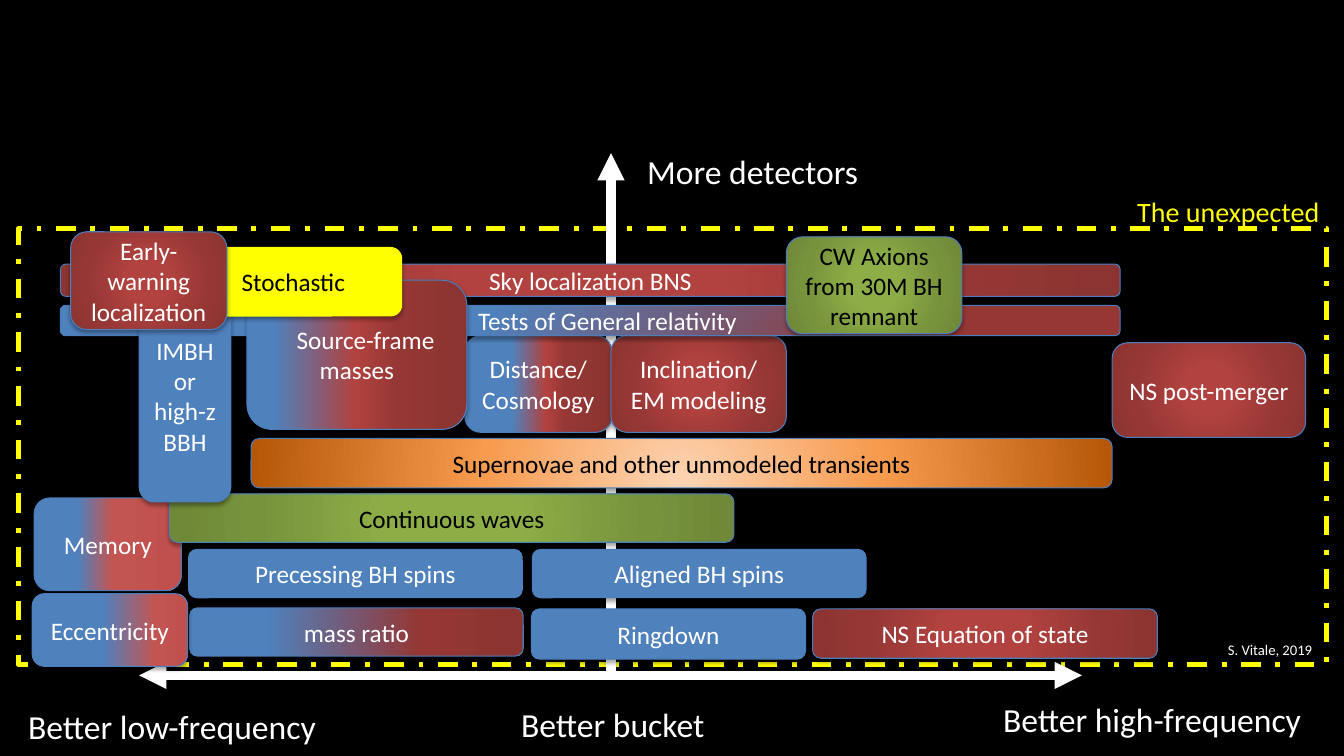
from pptx import Presentation
from pptx.dml.color import RGBColor
from pptx.enum.dml import MSO_LINE
from pptx.enum.shapes import MSO_CONNECTOR, MSO_SHAPE
from pptx.enum.text import MSO_ANCHOR, PP_ALIGN
from pptx.oxml import parse_xml
from pptx.oxml.ns import nsdecls
from pptx.util import Inches, Pt

RECT, ROUNDED = MSO_SHAPE.RECTANGLE, MSO_SHAPE.ROUNDED_RECTANGLE
STRAIGHT, DASH_DOT = MSO_CONNECTOR.STRAIGHT, MSO_LINE.DASH_DOT
CENTER, MIDDLE = PP_ALIGN.CENTER, MSO_ANCHOR.MIDDLE

BLACK = RGBColor(0x00, 0x00, 0x00)
WHITE = RGBColor(0xFF, 0xFF, 0xFF)
YELLOW = RGBColor(0xFF, 0xFF, 0x00)
BLUE = RGBColor(0x4F, 0x81, 0xBD)
EDGE = RGBColor(0x4B, 0x7E, 0xBC)
RED = RGBColor(0xB1, 0x42, 0x3F)
DARK_RED = RGBColor(0x95, 0x37, 0x35)
DEEP_RED = RGBColor(0x8B, 0x34, 0x31)
LIGHT_RED = RGBColor(0xC2, 0x55, 0x52)
SOFT_RED = RGBColor(0xC0, 0x50, 0x4D)
GREEN = RGBColor(0x8D, 0xAE, 0x47)
DARK_GREEN = RGBColor(0x77, 0x93, 0x3C)
DEEP_GREEN = RGBColor(0x6F, 0x89, 0x38)
PEACH = RGBColor(0xFC, 0xD5, 0xB5)
ORANGE = RGBColor(0xF7, 0x9B, 0x4F)
BROWN = RGBColor(0xB6, 0x57, 0x08)

FONT = "Calibri"
CENTRE = (50, 50, 50, 50)
REDS = [(69, DARK_RED), (97, DEEP_RED)]

# Gradient: (stops, focus as left, top, right, bottom; None runs left to right)
RED_GLOW = ([(0, RED), (23, RED)] + REDS, CENTRE)
GREEN_GLOW = ([(0, GREEN), (23, GREEN), (69, DARK_GREEN), (97, DEEP_GREEN)], CENTRE)
ORANGE_GLOW = ([(0, PEACH), (46, ORANGE), (100, BROWN)], (50, 130, 50, -30))
CORNER_GLOW = ([(0, BLUE), (37, BLUE), (40, BLUE), (79, DARK_RED)], (0, 0, 100, 100))
MEMORY_FADE = ([(29, BLUE), (53, LIGHT_RED), (100, SOFT_RED)], None)
ECCENTRIC_FADE = ([(45, BLUE), (79, LIGHT_RED), (100, SOFT_RED)], None)
RATIO_FADE = ([(0, BLUE), (23, BLUE)] + REDS, None)
DISTANCE_FADE = ([(32, BLUE), (55, RED)] + REDS, None)
MASSES_FADE = ([(12, BLUE), (49, RED)] + REDS, None)

FRAME = (0.18, 2.27, 12.98, 4.32)
# from x, from y, to x, to y, arrowhead at both ends
AXES = [(6.06, 6.7, 6.06, 1.52, False), (1.38, 6.7, 10.73, 6.7, True)]

# text, left, top, width, height, fill, text colour, first-line indent
TOPICS = [
    ("Sky localization BNS", 0.6, 2.62, 10.51, 0.32, RED_GLOW, WHITE, 0),
    ("Memory", 0.34, 4.94, 1.46, 0.92, MEMORY_FADE, WHITE, 0),
    ("Ringdown", 5.27, 6.04, 2.72, 0.5, BLUE, WHITE, 0),
    ("NS Equation of state", 8.06, 6.04, 3.42, 0.49, RED_GLOW, WHITE, 0),
    ("Precessing BH spins", 1.87, 5.45, 3.31, 0.48, BLUE, WHITE, 0),
    ("mass ratio", 1.88, 6.03, 3.31, 0.48, RATIO_FADE, WHITE, 0),
    ("Distance/\nCosmology", 4.61, 3.33, 1.46, 0.96, DISTANCE_FADE, WHITE, 0),
    ("Aligned BH spins", 5.28, 5.45, 3.31, 0.48, BLUE, WHITE, 0),
    ("Supernovae and other unmodeled transients",
     2.49, 4.35, 8.54, 0.49, ORANGE_GLOW, BLACK, 0),
    ("Continuous waves", 1.68, 4.9, 5.6, 0.48, GREEN_GLOW, BLACK, 0),
    ("Inclination/\nEM modeling", 6.06, 3.33, 1.74, 0.96, RED_GLOW, WHITE, 0),
    ("Tests of General relativity", 0.6, 3.03, 10.51, 0.3, CORNER_GLOW, WHITE, 0.34),
    ("Source-frame masses", 2.45, 2.78, 2.18, 1.48, MASSES_FADE, WHITE, 0.17),
    ("NS post-merger", 11.03, 3.4, 1.92, 0.94, RED_GLOW, WHITE, 0),
    ("IMBH\nor high-z\nBBH", 1.38, 2.87, 0.91, 2.11, BLUE, WHITE, 0),
    ("Stochastic", 1.83, 2.45, 2.16, 0.69, YELLOW, BLACK, 0),
    ("CW Axions from 30M BH remnant", 7.8, 2.35, 1.74, 0.96, GREEN_GLOW, BLACK, 0),
    ("Early-warning localization", 0.7, 2.3, 1.55, 0.97, RED_GLOW, WHITE, 0),
    ("Eccentricity", 0.32, 5.89, 1.54, 0.72, ECCENTRIC_FADE, WHITE, 0),
]

# text, left, top, width, height, size, colour
LABELS = [
    ("More detectors", 6.32, 1.45, 3.29, 0.5, 24, WHITE),
    ("Better low-frequency", 0.18, 6.95, 3.13, 0.5, 24, WHITE),
    ("Better bucket", 5.07, 6.93, 2.71, 0.5, 24, WHITE),
    ("Better high-frequency", 9.85, 6.88, 3.37, 0.5, 24, WHITE),
    ("The unexpected", 11.18, 1.88, 2.15, 0.44, 20, YELLOW),
    ("S. Vitale, 2019", 12.08, 6.31, 1.25, 0.29, 10.5, WHITE),
]


def add_shadow(sp, distance, opacity):
    sp._element.spPr.append(parse_xml(
        f'<a:effectLst {nsdecls("a")}><a:outerShdw blurRad="{Pt(3.1)}" dist="{Pt(distance)}" '
        f'dir="5400000" rotWithShape="0"><a:srgbClr val="{BLACK}">'
        f'<a:alpha val="{opacity * 1000}"/></a:srgbClr></a:outerShdw></a:effectLst>'))


def fill_gradient(sp, stops, focus):
    marks = "".join(f'<a:gs pos="{pos * 1000}"><a:srgbClr val="{color}"/></a:gs>'
                    for pos, color in stops)
    if focus:
        edges = " ".join(f'{side}="{pct * 1000}"' for side, pct in zip("ltrb", focus))
        shade = f'<a:path path="circle"><a:fillToRect {edges}/></a:path>'
    else:
        shade = '<a:lin ang="0" scaled="0"/>'
    sp.fill.background()
    spPr = sp._element.spPr
    spPr.replace(spPr.find("{*}noFill"), parse_xml(
        f'<a:gradFill {nsdecls("a")} rotWithShape="1"><a:gsLst>{marks}</a:gsLst>'
        f'{shade}</a:gradFill>'))


def write(tf, text, size, color):
    tf.word_wrap = True
    p = tf.paragraphs[0]
    p.text = text
    p.font.name, p.font.size = FONT, Pt(size)
    p.font.color.rgb = color
    return p


def add_frame(s):
    sp = s.shapes.add_shape(RECT, *map(Inches, FRAME))
    sp.shadow.inherit = False
    sp.fill.background()
    sp.line.color.rgb = YELLOW
    sp.line.width = Pt(3.5)
    sp.line.dash_style = DASH_DOT


def add_axis(s, x1, y1, x2, y2, both_ends):
    axis = s.shapes.add_connector(STRAIGHT, *map(Inches, (x1, y1, x2, y2)))
    axis.line.color.rgb = WHITE
    axis.line.width = Pt(6.5)
    for end in ("headEnd", "tailEnd") if both_ends else ("tailEnd",):
        axis.line._get_or_add_ln().append(
            parse_xml(f'<a:{end} {nsdecls("a")} type="triangle"/>'))
    add_shadow(axis, 1.6, 38)


def add_topic(s, text, left, top, width, height, fill, color, indent):
    sp = s.shapes.add_shape(ROUNDED, *map(Inches, (left, top, width, height)))
    if isinstance(fill, RGBColor):
        sp.fill.solid()
        sp.fill.fore_color.rgb = fill
    else:
        fill_gradient(sp, *fill)
    if fill == YELLOW:
        sp.line.fill.background()
    else:
        sp.line.color.rgb = EDGE
        sp.line.width = Pt(0.75)
    add_shadow(sp, 1.8, 35)
    sp.text_frame.vertical_anchor = MIDDLE
    p = write(sp.text_frame, text, 18, color)
    p.alignment = CENTER
    if indent:
        p._p.get_or_add_pPr().set("indent", str(Inches(indent)))


def main():
    prs = Presentation()
    prs.slide_width, prs.slide_height = Inches(13.33), Inches(7.5)
    s = prs.slides.add_slide(prs.slide_layouts[6])
    s.background.fill.solid()
    s.background.fill.fore_color.rgb = BLACK

    add_frame(s)
    for axis in AXES:
        add_axis(s, *axis)
    for topic in TOPICS:
        add_topic(s, *topic)
    for text, left, top, width, height, size, color in LABELS:
        box = s.shapes.add_textbox(*map(Inches, (left, top, width, height)))
        write(box.text_frame, text, size, color)
    prs.save("out.pptx")


if __name__ == "__main__":
    main()
